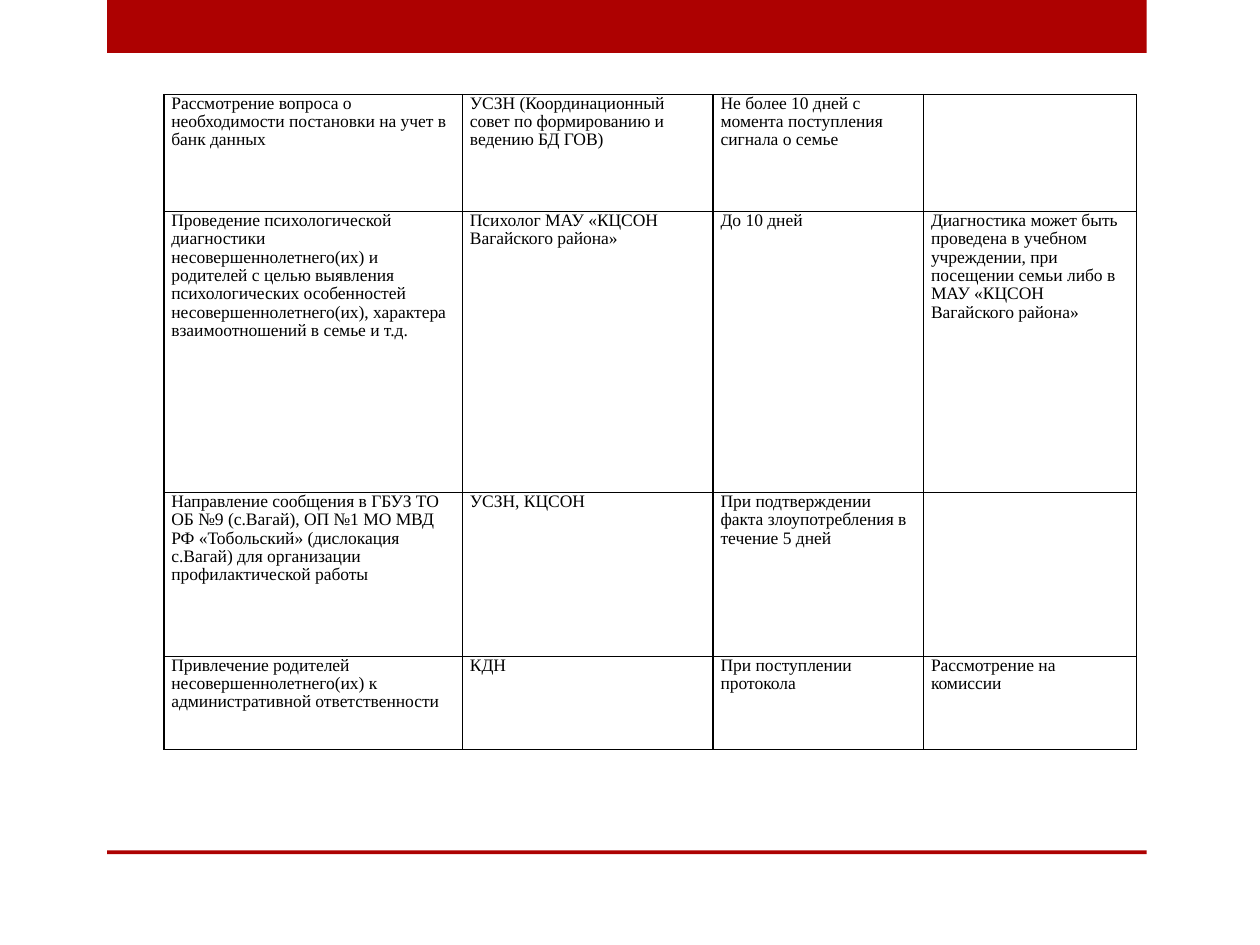
from dataclasses import dataclass

from lxml.etree import SubElement
from pptx import Presentation
from pptx.dml.color import RGBColor
from pptx.enum.shapes import MSO_SHAPE
from pptx.oxml.ns import qn
from pptx.util import Inches, Pt


@dataclass(frozen=True)
class Theme:
    accent: str = "AD0101"
    paper: str = "FFFFFF"
    ink: str = "000000"
    font: str = "Times New Roman"
    text_size: float = 10
    line_spacing: float = 0.95
    border_width: float = 1


THEME = Theme()

ROWS = [
    ("Рассмотрение вопроса о необходимости постановки на учет в банк данных",
     "УСЗН (Координационный совет по формированию и ведению БД ГОВ)",
     "Не более 10 дней с момента поступления сигнала о семье",
     ""),
    ("Проведение психологической диагностики несовершеннолетнего(их) и родителей "
     "с целью выявления психологических особенностей несовершеннолетнего(их), "
     "характера взаимоотношений в семье и т.д.",
     "Психолог МАУ «КЦСОН Вагайского района»",
     "До 10 дней",
     "Диагностика может быть проведена в учебном учреждении, при посещении семьи "
     "либо в МАУ «КЦСОН Вагайского района»"),
    ("Направление сообщения в ГБУЗ ТО ОБ №9 (с.Вагай), ОП №1 МО МВД РФ «Тобольский» "
     "(дислокация с.Вагай) для организации профилактической работы",
     "УСЗН, КЦСОН",
     "При подтверждении факта злоупотребления в течение 5 дней",
     ""),
    ("Привлечение родителей несовершеннолетнего(их) к административной ответственности",
     "КДН",
     "При поступлении протокола",
     "Рассмотрение на комиссии"),
]
COLUMN_WIDTHS = [2.37, 1.99, 1.67, 1.69]
ROW_HEIGHTS = [0.93, 2.23, 1.3, 0.74]
TABLE_LEFT, TABLE_TOP = 1.3, 0.75
CELL_INSET = 0.06

BAND_LEFT, BAND_WIDTH = 0.85, 8.25
BANDS = [(0, 0.42), (6.75, 0.03)]  # top, height


def add_band(slide, top, height):
    band = slide.shapes.add_shape(
        MSO_SHAPE.RECTANGLE,
        Inches(BAND_LEFT), Inches(top), Inches(BAND_WIDTH), Inches(height))
    band.shadow.inherit = False
    band.fill.solid()
    band.fill.fore_color.rgb = RGBColor.from_string(THEME.accent)
    band.line.fill.background()


def add_borders(cell):
    """Draw all four sides; the lines must precede the fill in tcPr."""
    properties = cell._tc.get_or_add_tcPr()
    for side in ("a:lnL", "a:lnR", "a:lnT", "a:lnB"):
        line = SubElement(properties, qn(side), w=str(Pt(THEME.border_width)))
        fill = SubElement(line, qn("a:solidFill"))
        SubElement(fill, qn("a:srgbClr"), val=THEME.ink)


def fill_cell(cell, text):
    add_borders(cell)
    cell.fill.solid()
    cell.fill.fore_color.rgb = RGBColor.from_string(THEME.paper)
    cell.margin_left = cell.margin_right = Inches(CELL_INSET)
    cell.margin_top = cell.margin_bottom = 0
    if not text:
        return
    paragraph = cell.text_frame.paragraphs[0]
    paragraph.line_spacing = THEME.line_spacing
    run = paragraph.add_run()
    run.text = text
    run.font.name = THEME.font
    run.font.size = Pt(THEME.text_size)
    run.font.color.rgb = RGBColor.from_string(THEME.ink)


def add_measures_table(slide):
    table = slide.shapes.add_table(
        len(ROWS), len(COLUMN_WIDTHS), Inches(TABLE_LEFT), Inches(TABLE_TOP),
        Inches(sum(COLUMN_WIDTHS)), Inches(sum(ROW_HEIGHTS))).table
    table.first_row = table.horz_banding = False
    for column, width in zip(table.columns, COLUMN_WIDTHS):
        column.width = Inches(width)
    for row, height, texts in zip(table.rows, ROW_HEIGHTS, ROWS):
        row.height = Inches(height)
        for cell, text in zip(row.cells, texts):
            fill_cell(cell, text)


def main():
    presentation = Presentation()
    presentation.slide_width, presentation.slide_height = Inches(10), Inches(7.5)
    slide = presentation.slides.add_slide(presentation.slide_layouts[6])
    for top, height in BANDS:
        add_band(slide, top, height)
    add_measures_table(slide)
    presentation.save("out.pptx")


if __name__ == "__main__":
    main()
